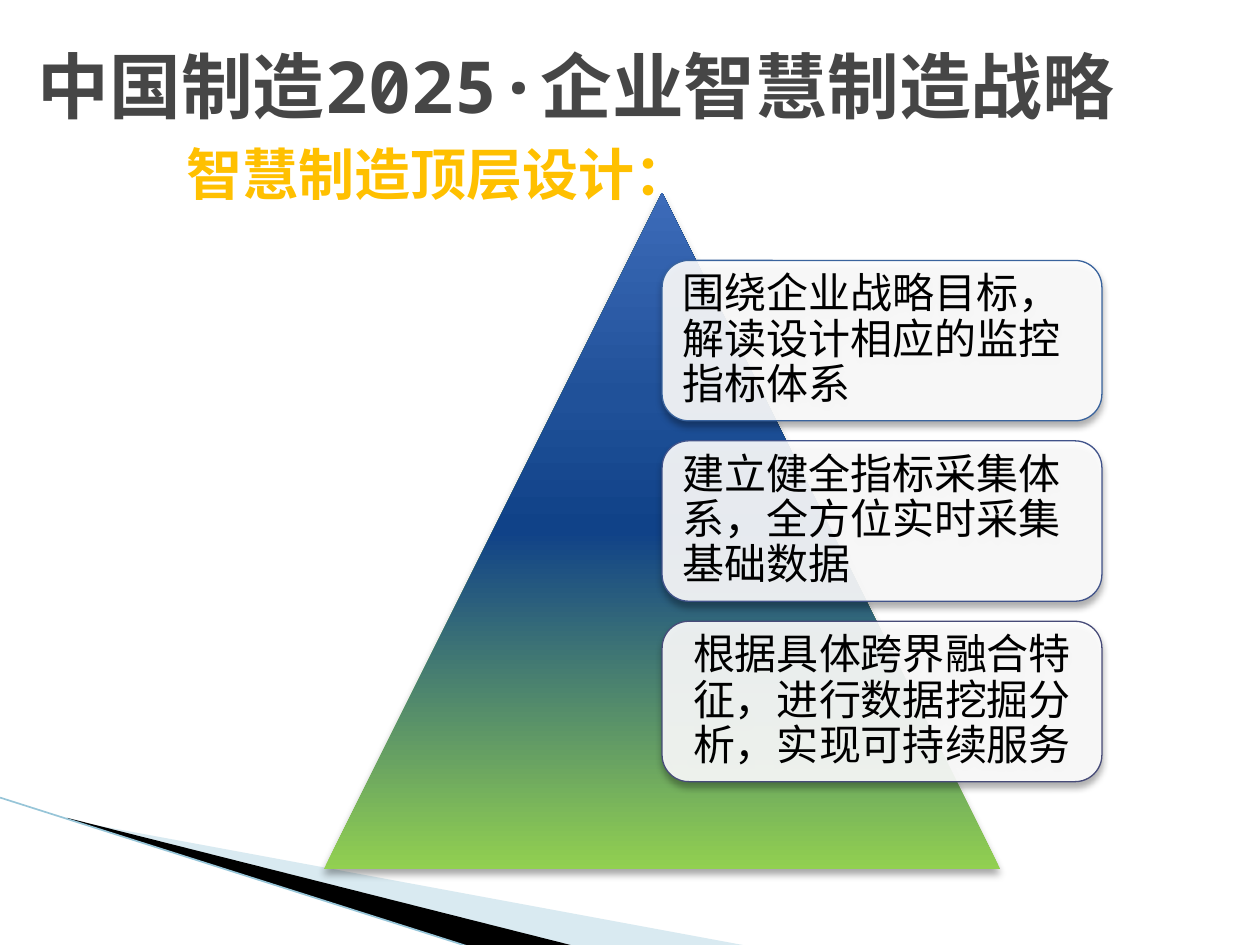
from collections import namedtuple

from lxml import etree
from pptx import Presentation
from pptx.dml.color import RGBColor
from pptx.enum.shapes import MSO_CONNECTOR, MSO_SHAPE
from pptx.enum.text import MSO_ANCHOR, MSO_AUTO_SIZE, PP_ALIGN
from pptx.oxml import parse_xml
from pptx.oxml.ns import nsdecls, qn
from pptx.util import Inches, Pt

TRIANGLE, ROUNDED = MSO_SHAPE.ISOSCELES_TRIANGLE, MSO_SHAPE.ROUNDED_RECTANGLE
STRAIGHT = MSO_CONNECTOR.STRAIGHT
MIDDLE = MSO_ANCHOR.MIDDLE
LEFT, CENTER = PP_ALIGN.LEFT, PP_ALIGN.CENTER
NO_FIT = MSO_AUTO_SIZE.NONE
TITLE_ONLY = 5

Box = namedtuple("Box", "left top width height")

THEME = {
    "font": "Noto Sans Mono",
    "title": {"size": 41, "color": "464646", "bold": True},
    "subtitle": {"size": 32, "color": "FFC000", "bold": True},
    "card": {"size": 24, "color": "000000", "bold": False},
    "card_fill": "FFFFFF",
    "wave": "A0CBDC",
    "wave_dark": "000000",
    "wave_line": "97C5D8",
    "pyramid": [(0, "92D050"), (50, "104288"), (70, "205199"), (100, "3D6BB9")],
}

CARDS = [
    ("围绕企业战略目标，解读设计相应的监控指标体系", "39639D", LEFT),
    ("建立健全指标采集体系，全方位实时采集基础数据", "41538A", LEFT),
    ("根据具体跨界融合特征，进行数据挖掘分析，实现可持续服务", "474B78", CENTER),
]


def inches(box):
    return [Inches(v) for v in box]


def set_fill(sp, color, opacity=100):
    sp.fill.solid()
    sp.fill.fore_color.rgb = RGBColor.from_string(color)
    if opacity < 100:
        clr = sp.fill._xPr.find(qn("a:solidFill"))[0]
        etree.SubElement(clr, qn("a:alpha"), val=str(opacity * 1000))


def set_gradient(sp, stops):
    """Vertical gradient, its first stop at the bottom."""
    sp.fill.background()
    old = sp._element.spPr.find(qn("a:noFill"))
    gs = "".join(f'<a:gs pos="{pos * 1000}"><a:srgbClr val="{color}"/></a:gs>'
                 for pos, color in stops)
    old.getparent().replace(old, parse_xml(
        f'<a:gradFill {nsdecls("a")} rotWithShape="1"><a:gsLst>{gs}</a:gsLst>'
        '<a:lin ang="16200000" scaled="0"/></a:gradFill>'))


def set_shadow(sp):
    sp.shadow.inherit = False
    effects = sp._element.spPr.find(qn("a:effectLst"))
    effects.append(parse_xml(
        f'<a:outerShdw {nsdecls("a")} blurRad="{Pt(4)}" dist="{Pt(3)}" dir="5400000" '
        'rotWithShape="0"><a:srgbClr val="000000"><a:alpha val="35000"/></a:srgbClr>'
        '</a:outerShdw>'))


def write(tf, text, style, align=LEFT, **frame):
    for name, value in {"word_wrap": True, "auto_size": NO_FIT, **frame}.items():
        setattr(tf, name, value)
    p = tf.paragraphs[0]
    p.alignment = align
    r = p.add_run()
    r.text = text
    values = {"name": THEME["font"], "size": Pt(style["size"]), "bold": style["bold"]}
    for name, value in values.items():
        setattr(r.font, name, value)
    r.font.color.rgb = RGBColor.from_string(style["color"])
    etree.SubElement(r._r.get_or_add_rPr(), qn("a:ea"), typeface=THEME["font"])
    return p


def add_outline(slide, points, color, opacity=100):
    pts = [tuple(inches(pt)) for pt in points]
    builder = slide.shapes.build_freeform(*pts[0])
    builder.add_line_segments(pts[1:], close=True)
    sp = builder.convert_to_shape()
    set_fill(sp, color, opacity)
    sp.line.fill.background()
    sp.shadow.inherit = False


def add_waves(slide, box):
    """Swept bands rising from the bottom edge to the left edge of the slide."""
    x, y, bottom = box.left, box.top, box.top + box.height
    add_outline(slide, [(x + 0.55, y + 0.18), (x + 5.95, bottom),
                        (x + 4.56, bottom), (x + 0.55, y + 0.17)], THEME["wave"], 40)
    add_outline(slide, [(x + 0.53, y + 0.16), (x + 4.57, bottom),
                        (x + 3.72, bottom), (x + 0.54, y + 0.17)], THEME["wave_dark"])
    line = slide.shapes.add_connector(
        STRAIGHT, *inches((x, y, x + 3.71, bottom)))
    line.line.color.rgb = RGBColor.from_string(THEME["wave_line"])
    line.line.width = Pt(0.95)
    etree.SubElement(line._element.spPr, qn("a:effectLst"))


def add_card(slide, box, text, border, align):
    sp = slide.shapes.add_shape(ROUNDED, *inches(box))
    set_fill(sp, THEME["card_fill"], 90)
    sp.line.color.rgb = RGBColor.from_string(border)
    sp.line.width = Pt(0.75)
    set_shadow(sp)
    inset = Inches(0.1)
    p = write(sp.text_frame, text, THEME["card"], align, vertical_anchor=MIDDLE,
              margin_left=inset, margin_right=inset, margin_top=inset, margin_bottom=inset)
    p.line_spacing = 0.9
    p.space_after = Pt(8.4)


def add_pyramid(slide, box):
    """Triangle with a column of cards starting at its axis."""
    sp = slide.shapes.add_shape(TRIANGLE, *inches(box))
    set_gradient(sp, THEME["pyramid"])
    sp.line.fill.background()
    set_shadow(sp)
    height = box.height * 0.237
    pitch = height * 9 / 8
    for i, card in enumerate(CARDS):
        place = Box(box.left + box.width / 2, box.top + box.height * 0.1 + i * pitch,
                    box.width * 0.65, height)
        add_card(slide, place, *card)


def add_title(slide, box):
    title = slide.shapes.title
    title.left, title.top, title.width, title.height = inches(box)
    write(title.text_frame, "中国制造2025·企业智慧制造战略", THEME["title"],
          vertical_anchor=MIDDLE)


def add_subtitle(slide, box):
    tb = slide.shapes.add_textbox(*inches(box))
    write(tb.text_frame, "智慧制造顶层设计：", THEME["subtitle"])


def main():
    prs = Presentation()
    prs.slide_width, prs.slide_height = Inches(10), Inches(7.5)
    slide = prs.slides.add_slide(prs.slide_layouts[TITLE_ONLY])
    add_waves(slide, Box(0, 6.33, 6, 1.18))
    add_subtitle(slide, Box(1.38, 1.06, 6.54, 0.64))
    add_pyramid(slide, Box(2.57, 1.53, 5.37, 5.37))
    add_title(slide, Box(0.2, 0.05, 9.5, 1.25))
    prs.save("out.pptx")


if __name__ == "__main__":
    main()
